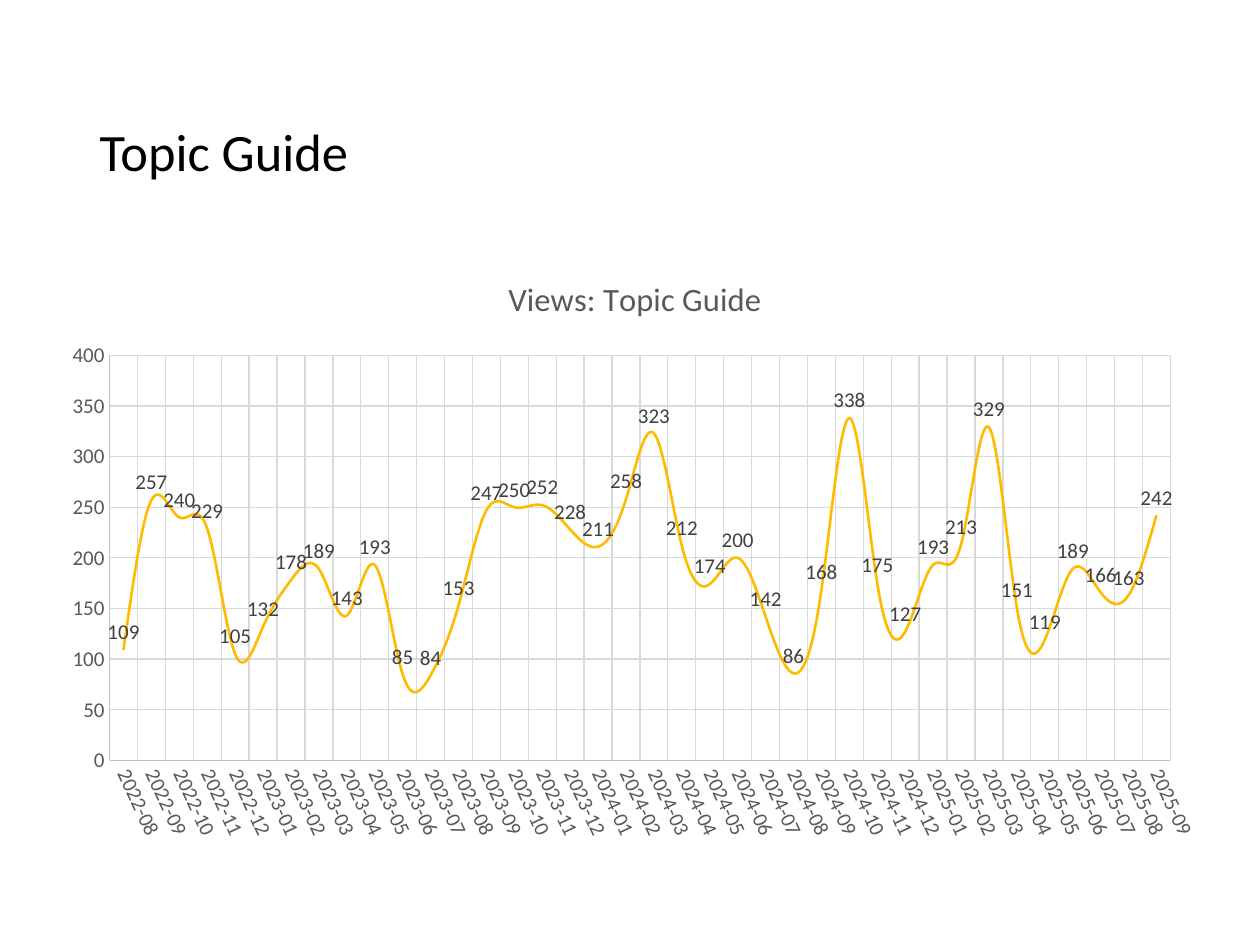
from dataclasses import dataclass

from pptx import Presentation
from pptx.chart.data import CategoryChartData
from pptx.dml.color import RGBColor
from pptx.enum.chart import XL_CHART_TYPE, XL_LABEL_POSITION, XL_MARKER_STYLE, XL_TICK_MARK
from pptx.enum.text import MSO_ANCHOR, PP_ALIGN
from pptx.util import Pt

LINE_CHART = XL_CHART_TYPE.LINE
ABOVE = XL_LABEL_POSITION.ABOVE
NO_MARKER = XL_MARKER_STYLE.NONE
NO_TICK = XL_TICK_MARK.NONE
BOTTOM = MSO_ANCHOR.BOTTOM
LEFT = PP_ALIGN.LEFT

TITLE_ONLY = 5
FONT = "Calibri"
COLORS = {
    "title": "000000",
    "axis_text": "595959",
    "axis_line": "BFBFBF",
    "grid": "D9D9D9",
    "views": "FFBB00",
    "label": "404040",
}
FIRST_YEAR, FIRST_MONTH = 2022, 8
VIEWS = [
    109, 257, 240, 229, 105, 132, 178, 189, 143, 193, 85, 84, 153,
    247, 250, 252, 228, 211, 258, 323, 212, 174, 200, 142, 86, 168,
    338, 175, 127, 193, 213, 329, 151, 119, 189, 166, 163, 242,
]


@dataclass(frozen=True)
class Box:
    left: float
    top: float
    width: float
    height: float

    def lengths(self) -> tuple:
        return Pt(self.left), Pt(self.top), Pt(self.width), Pt(self.height)


TITLE_BOX = Box(49.7, 3.6, 567.4, 104.4)
CHART_BOX = Box(28.1, 144, 669.6, 342.7)


def format_font(font, size: float, color: str) -> None:
    values = {"name": FONT, "size": Pt(size), "bold": False}
    for name, value in values.items():
        setattr(font, name, value)
    font.color.rgb = RGBColor.from_string(COLORS[color])


def format_line(line, width: float, color: str) -> None:
    line.width = Pt(width)
    line.color.rgb = RGBColor.from_string(COLORS[color])


def format_axis(axis) -> None:
    values = {"major_tick_mark": NO_TICK, "minor_tick_mark": NO_TICK,
              "has_major_gridlines": True}
    for name, value in values.items():
        setattr(axis, name, value)
    format_font(axis.tick_labels.font, 12, "axis_text")
    format_line(axis.format.line, 0.75, "axis_line")
    format_line(axis.major_gridlines.format.line, 0.75, "grid")


def month_names(count: int) -> list[str]:
    months = range(FIRST_MONTH - 1, FIRST_MONTH - 1 + count)
    return [f"{FIRST_YEAR + month // 12}-{month % 12 + 1:02}" for month in months]


def add_title(slide, text: str) -> None:
    title = slide.shapes.title
    title.left, title.top, title.width, title.height = TITLE_BOX.lengths()
    title.text_frame.vertical_anchor = BOTTOM
    title.text_frame.word_wrap = True
    paragraph = title.text_frame.paragraphs[0]
    paragraph.text = text
    paragraph.alignment = LEFT
    paragraph.line_spacing = 0.9
    format_font(paragraph.runs[0].font, 30, "title")


def add_views_chart(slide, heading: str) -> None:
    data = CategoryChartData()
    data.categories = month_names(len(VIEWS))
    data.add_series("Series 1", VIEWS)
    chart = slide.shapes.add_chart(LINE_CHART, *CHART_BOX.lengths(), data).chart
    chart.has_legend = False
    format_font(chart.font, 10, "title")

    # Heading
    chart.has_title = True
    chart.chart_title.include_in_layout = False
    paragraph = chart.chart_title.text_frame.paragraphs[0]
    paragraph.text = heading
    format_font(paragraph.runs[0].font, 18.6, "axis_text")

    # Axes, with month labels turned 65 degrees
    for axis in (chart.category_axis, chart.value_axis):
        format_axis(axis)
    chart.value_axis.minimum_scale = 0
    chart.value_axis.maximum_scale = 400
    chart.value_axis.major_unit = 50
    body = chart.element.xpath(".//c:catAx/c:txPr/a:bodyPr")[0]
    body.set("rot", str(65 * 60000))

    # Line and value labels
    plot = chart.plots[0]
    plot.vary_by_categories = False
    series = plot.series[0]
    series.smooth = True
    series.marker.style = NO_MARKER
    format_line(series.format.line, 1.5, "views")
    labels = series.data_labels
    labels.show_value = True
    labels.position = ABOVE
    format_font(labels.font, 12, "label")


def main() -> None:
    presentation = Presentation()
    presentation.slide_width, presentation.slide_height = Pt(720), Pt(540)
    slide = presentation.slides.add_slide(presentation.slide_layouts[TITLE_ONLY])
    add_title(slide, "Topic Guide")
    add_views_chart(slide, "Views: Topic Guide")
    presentation.save("out.pptx")


if __name__ == "__main__":
    main()
